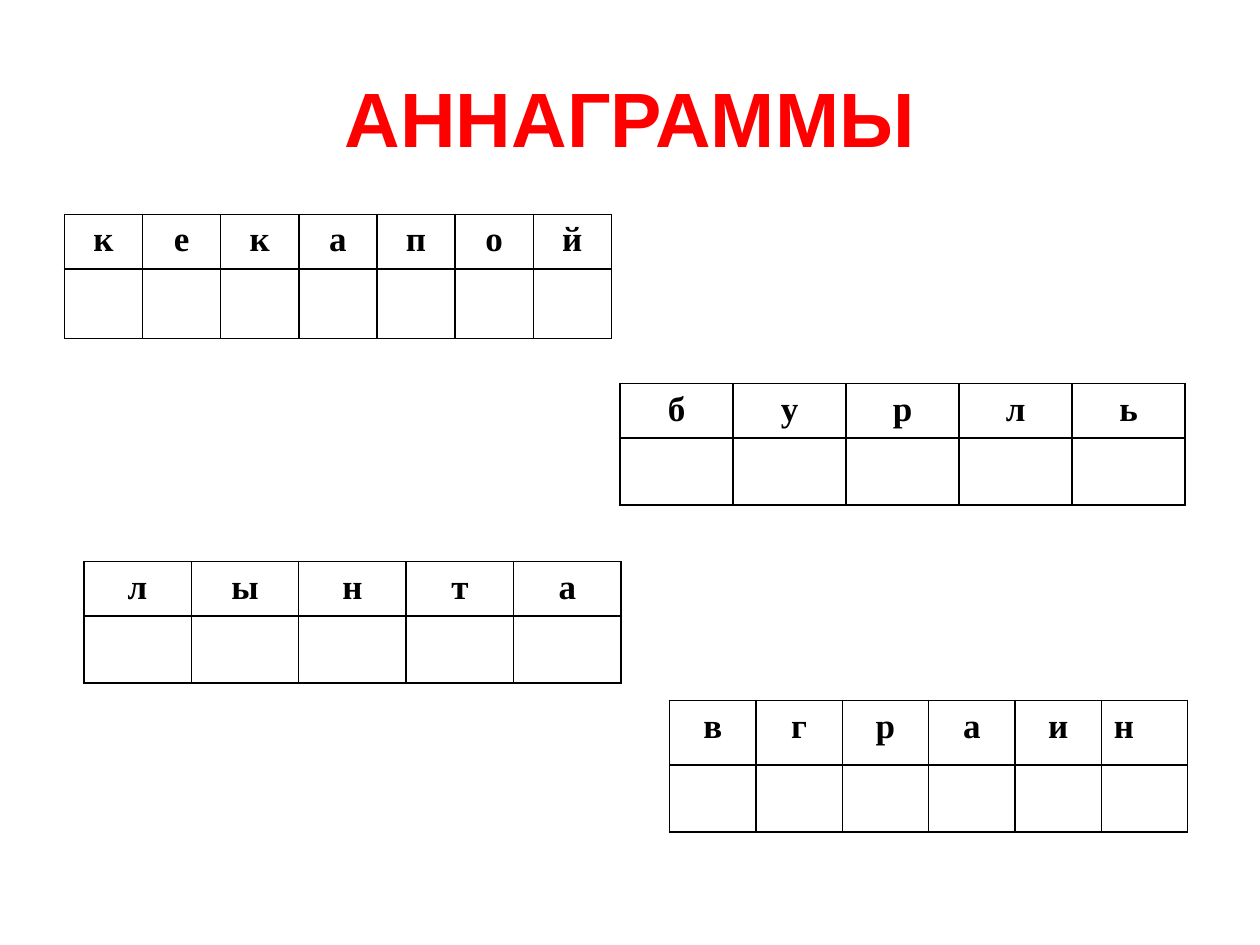
from lxml.etree import SubElement
from pptx import Presentation
from pptx.dml.color import RGBColor
from pptx.enum.text import MSO_ANCHOR, PP_ALIGN
from pptx.oxml.ns import qn
from pptx.util import Cm, Pt

TITLE = "АННАГРАММЫ"
RED, BLACK = "FF0000", "000000"

# letters, left, top, width, row heights (cm), letters aligned left
ANAGRAMS = [
    ("кекапой", 1.3, 4.32, 11.03, (1.04, 1.4), ""),
    ("бурль", 12.5, 7.73, 11.39, (1.04, 1.35), ""),
    ("лынта", 1.69, 11.32, 10.83, (1.04, 1.35), ""),
    ("вграин", 13.5, 14.12, 10.44, (1.3, 1.35), "н"),
]
HANGING = Cm(0.95)


def format_text(paragraph, align, size, font, color):
    """Align a paragraph and style its runs in bold."""
    paragraph.alignment = align
    for run in paragraph.runs:
        run.font.size = Pt(size)
        run.font.name = font
        run.font.bold = True
        run.font.color.rgb = RGBColor.from_string(color)


def outline_cell(cell, color):
    """Clear the cell's fill and draw its four borders."""
    cell.fill.background()
    properties = cell._tc.get_or_add_tcPr()
    for position, side in enumerate(("a:lnL", "a:lnR", "a:lnT", "a:lnB")):
        border = SubElement(properties, qn(side), w=str(Pt(1)))
        fill = SubElement(border, qn("a:solidFill"))
        SubElement(fill, qn("a:srgbClr"), val=color)
        properties.insert(position, border)


def add_title(slide, title):
    """Add the centred heading."""
    heading = slide.shapes.add_textbox(Cm(1.27), Cm(0.76), Cm(22.86), Cm(3.18))
    frame = heading.text_frame
    frame.word_wrap = True
    frame.vertical_anchor = MSO_ANCHOR.MIDDLE
    frame.text = title
    format_text(frame.paragraphs[0], PP_ALIGN.CENTER, 44, "Arial", RED)


def add_anagram(slide, letters, left, top, width, heights, left_aligned):
    """Add a row of letters above a row of empty answer cells."""
    grid = slide.shapes.add_table(
        len(heights), len(letters), Cm(left), Cm(top), Cm(width), Cm(sum(heights))
    ).table
    grid.first_row = grid.horz_banding = False
    for row, height in zip(grid.rows, heights):
        row.height = Cm(height)
    for column in grid.columns:
        column.width = Cm(width / len(letters))
    for cell in grid.iter_cells():
        outline_cell(cell, BLACK)
    for index, letter in enumerate(letters):
        cell = grid.cell(0, index)
        cell.text_frame.text = letter
        paragraph = cell.text_frame.paragraphs[0]
        align = PP_ALIGN.LEFT if letter in left_aligned else PP_ALIGN.CENTER
        format_text(paragraph, align, 20, "Times New Roman", BLACK)
        indent = paragraph._p.get_or_add_pPr()
        indent.set("marL", str(HANGING))
        indent.set("indent", str(-HANGING))


presentation = Presentation()
presentation.slide_width, presentation.slide_height = Cm(25.4), Cm(19.05)
slide = presentation.slides.add_slide(presentation.slide_layouts[6])
add_title(slide, TITLE)
for anagram in ANAGRAMS:
    add_anagram(slide, *anagram)
presentation.save("out.pptx")
